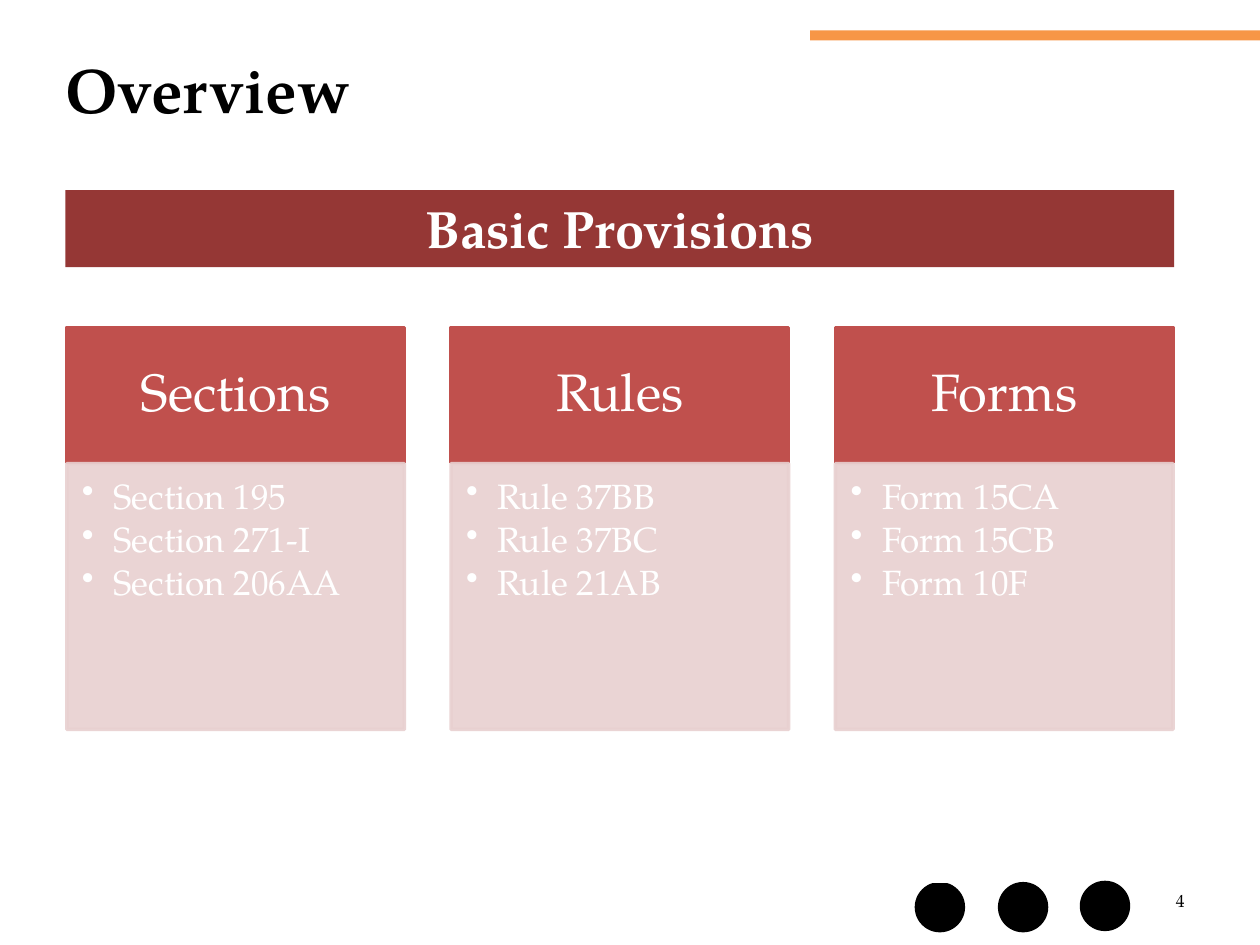
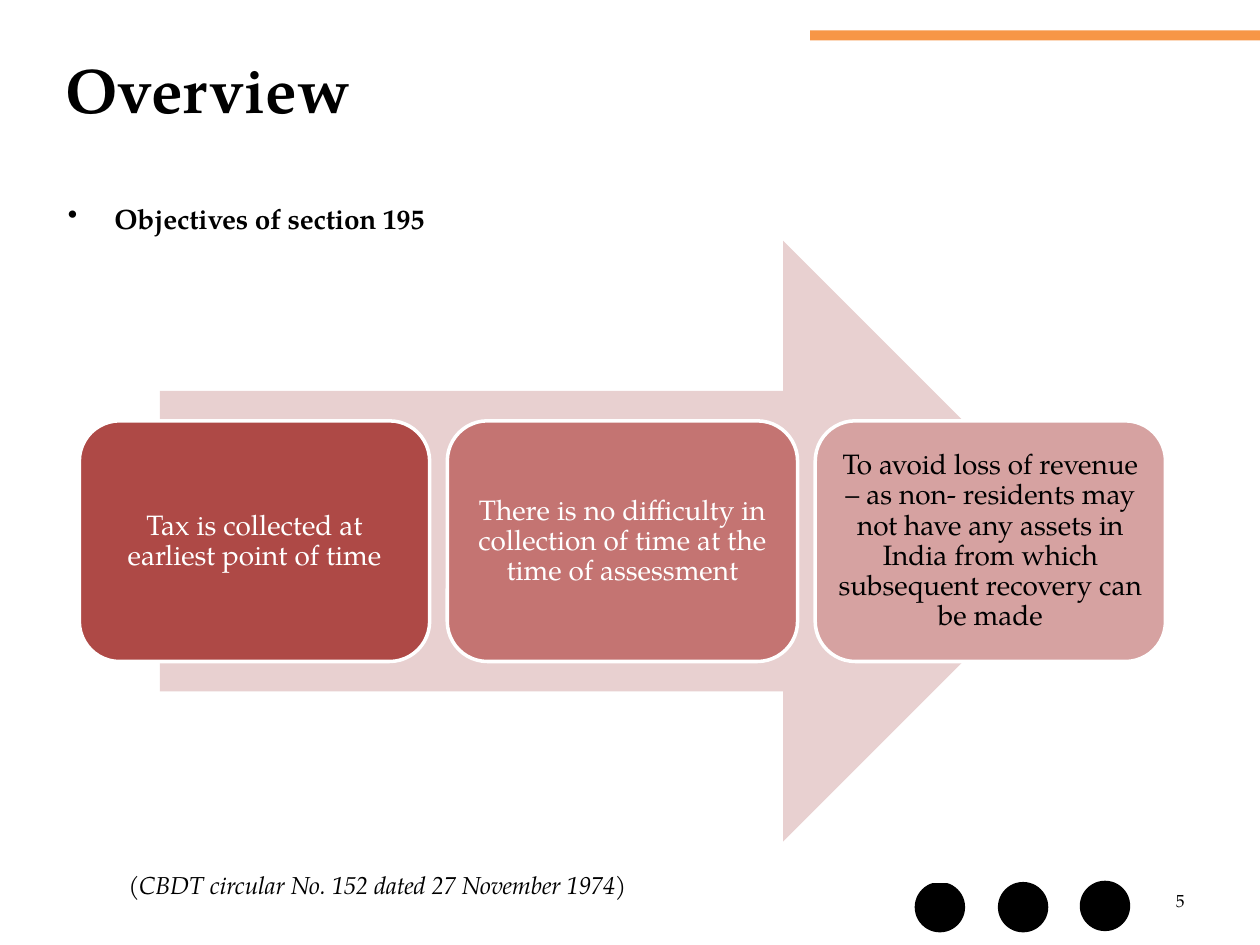
from lxml.etree import SubElement
from pptx import Presentation
from pptx.dml.color import RGBColor
from pptx.enum.shapes import MSO_SHAPE
from pptx.enum.text import MSO_ANCHOR, MSO_AUTO_SIZE, PP_ALIGN
from pptx.oxml.ns import qn
from pptx.util import Inches, Pt

FONT = "TeX Gyre Pagella"
COLORS = {
    "black": "000000",
    "white": "FFFFFF",
    "accent": "F79646",
    "banner": "953735",
    "card": "C0504D",
    "pale": "E8D0D0",
    "step_dark": "AE4946",
    "step_medium": "C47472",
    "step_light": "D6A2A1",
}
DEFAULT_INSETS = (0.1, 0.05, 0.1, 0.05)
BUTTON_SIZE = 0.4
HOUSE = [(0.2, 0.08), (0.31, 0.18), (0.29, 0.18), (0.29, 0.3), (0.22, 0.3), (0.22, 0.25),
         (0.18, 0.25), (0.18, 0.3), (0.11, 0.3), (0.11, 0.18), (0.09, 0.18)]
BUTTONS = [
    (7.26, 7.0, [(0.26, 0.08), (0.13, 0.2), (0.26, 0.32)], False),
    (7.92, 7.0, HOUSE, True),
    (8.57, 6.99, [(0.14, 0.08), (0.27, 0.2), (0.14, 0.32)], False),
]
CARDS = [
    ("Sections", ["Section 195", "Section 271-I", "Section 206AA"]),
    ("Rules", ["Rule 37BB", "Rule 37BC", "Rule 21AB"]),
    ("Forms", ["Form 15CA", "Form 15CB", "Form 10F"]),
]
STEPS = [
    ("Tax is collected at earliest point of time", "step_dark", "white"),
    ("There is no difficulty in collection of time at the time of assessment",
     "step_medium", "white"),
    ("To avoid loss of revenue – as non- residents may not have any assets in India "
     "from which subsequent recovery can be made", "step_light", "black"),
]


def rgb(name):
    return RGBColor.from_string(COLORS[name])


def add_bullet(paragraph, margin, hanging):
    properties = paragraph._p.get_or_add_pPr()
    properties.set("marL", str(Inches(margin)))
    properties.set("indent", str(-Inches(hanging)))
    SubElement(properties, qn("a:buChar")).set("char", "•")


def write_text(shape, lines, size=16, color="black", bold=False, italic=False,
               align=PP_ALIGN.LEFT, anchor=MSO_ANCHOR.TOP, insets=DEFAULT_INSETS,
               line_spacing=None, before=0, after=0, bullet=None, tracking=None, wrap=True):
    frame = shape.text_frame
    frame.auto_size = MSO_AUTO_SIZE.NONE
    frame.word_wrap = wrap
    frame.vertical_anchor = anchor
    frame.margin_left, frame.margin_top, frame.margin_right, frame.margin_bottom = map(
        Inches, insets)
    for index, line in enumerate(lines):
        paragraph = frame.add_paragraph() if index else frame.paragraphs[0]
        paragraph.alignment = align
        paragraph.space_before = Pt(before)
        paragraph.space_after = Pt(after)
        if line_spacing:
            paragraph.line_spacing = line_spacing
        if bullet:
            add_bullet(paragraph, *bullet)
        run = paragraph.add_run()
        run.text = line
        run.font.name = FONT
        run.font.size = Pt(size)
        run.font.bold = bold
        run.font.italic = italic
        run.font.color.rgb = rgb(color)
        if tracking:
            run._r.get_or_add_rPr().set("spc", str(round(tracking * 100)))


def set_opacity(fill_parent, percent):
    color = fill_parent.find(qn("a:solidFill"))[0]
    SubElement(color, qn("a:alpha")).set("val", str(percent * 1000))


def add_box(slide, kind, left, top, width, height, fill, line=None, opacity=None):
    shape = slide.shapes.add_shape(
        kind, Inches(left), Inches(top), Inches(width), Inches(height))
    shape.shadow.inherit = False
    shape.fill.solid()
    shape.fill.fore_color.rgb = rgb(fill)
    if line:
        shape.line.color.rgb = rgb(line)
        shape.line.width = Pt(2)
    else:
        shape.line.fill.background()
    if opacity:
        properties = shape._element.spPr
        set_opacity(properties, opacity)
        set_opacity(properties.find(qn("a:ln")), opacity)
    return shape


def add_text(slide, left, top, width, height, text, **text_format):
    box = slide.shapes.add_textbox(Inches(left), Inches(top), Inches(width), Inches(height))
    write_text(box, [text], **text_format)


def add_button(slide, left, top, points, closed):
    add_box(slide, MSO_SHAPE.OVAL, left, top, BUTTON_SIZE, BUTTON_SIZE, "black")
    outline = [(left + x, top + y) for x, y in points]
    builder = slide.shapes.build_freeform(*outline[0], scale=Inches(1))
    builder.add_line_segments(outline[1:], close=closed)
    icon = builder.convert_to_shape()
    icon.shadow.inherit = False
    icon.fill.background()
    icon.line.color.rgb = rgb("white")
    icon.line.width = Pt(1.25)


def add_base_slide(presentation, title, number):
    slide = presentation.slides.add_slide(presentation.slide_layouts[5])
    heading = slide.shapes.title
    heading.left, heading.top = Inches(0.42), Inches(0.33)
    heading.width, heading.height = Inches(8.9), Inches(1.39)
    write_text(heading, [title], size=36, bold=True, insets=(0.1, 0.07, 0.1, 0.05))
    add_box(slide, MSO_SHAPE.RECTANGLE, 6.43, 0.24, 3.57, 0.08, "accent")
    add_text(slide, 7.17, 6.95, 2.33, 0.4, str(number), size=10,
             align=PP_ALIGN.RIGHT, anchor=MSO_ANCHOR.MIDDLE)
    for button in BUTTONS:
        add_button(slide, *button)
    return slide


def add_card(slide, left, heading, items):
    header = add_box(slide, MSO_SHAPE.RECTANGLE, left, 2.6, 2.68, 1.07, "card", line="card")
    write_text(header, [heading], size=30, color="white", align=PP_ALIGN.CENTER,
               anchor=MSO_ANCHOR.MIDDLE, insets=(0.23, 0.13, 0.23, 0.13), line_spacing=0.9)
    body = add_box(slide, MSO_SHAPE.RECTANGLE, left, 3.68, 2.68, 2.11, "pale",
                   line="pale", opacity=90)
    write_text(body, items, size=20, color="white", insets=(0.12, 0.12, 0.16, 0.17),
               line_spacing=0.9, after=3, bullet=(0.25, 0.25))


def add_step(slide, left, text, fill, color):
    step = add_box(slide, MSO_SHAPE.ROUNDED_RECTANGLE, left, 3.34, 2.78, 1.91, fill,
                   line="white")
    write_text(step, [text], color=color, align=PP_ALIGN.CENTER, anchor=MSO_ANCHOR.MIDDLE,
               insets=(0.07, 0.07, 0.07, 0.07), line_spacing=0.9)


def add_provisions_slide(presentation):
    slide = add_base_slide(presentation, "Overview", 4)
    banner = add_box(slide, MSO_SHAPE.RECTANGLE, 0.52, 1.51, 8.8, 0.61, "banner")
    write_text(banner, ["Basic Provisions"], size=30, color="white", bold=True,
               align=PP_ALIGN.CENTER, before=1.1, tracking=-0.1)
    for index, (heading, items) in enumerate(CARDS):
        add_card(slide, 0.53 + 3.05 * index, heading, items)


def add_objectives_slide(presentation):
    slide = add_base_slide(presentation, "Overview", 5)
    add_text(slide, 0.42, 1.55, 8.83, 0.37, "Objectives of section 195", bold=True,
             before=1.1, bullet=(0.39, 0.37), tracking=-0.1)
    add_box(slide, MSO_SHAPE.RIGHT_ARROW, 1.27, 1.91, 7.33, 4.77, "pale")
    for index, step in enumerate(STEPS):
        add_step(slide, 0.63 + 2.92 * index, *step)
    add_text(slide, 0.92, 6.86, 4.2, 0.34, "(CBDT circular No. 152 dated 27 November 1974)",
             size=14, italic=True, tracking=-0.1, wrap=False)


def main():
    presentation = Presentation()
    presentation.slide_width = Inches(10)
    presentation.slide_height = Inches(7.5)
    add_provisions_slide(presentation)
    add_objectives_slide(presentation)
    presentation.save("out.pptx")


if __name__ == "__main__":
    main()
